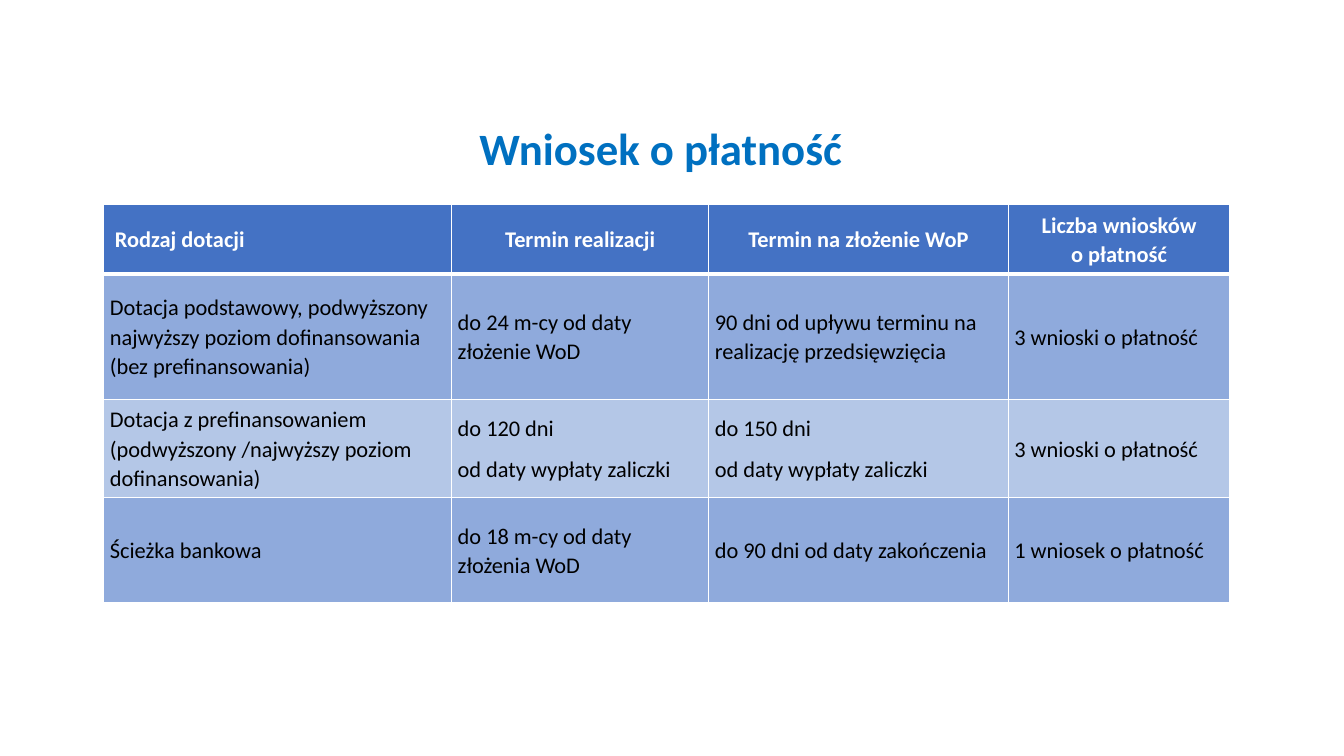
"""Build a slide with a table of grant types, deadlines and payment claims."""
from dataclasses import dataclass

from lxml.etree import SubElement
from pptx import Presentation
from pptx.dml.color import RGBColor
from pptx.enum.text import MSO_ANCHOR, PP_ALIGN
from pptx.oxml.ns import qn
from pptx.util import Inches, Pt

TITLE = "Wniosek o płatność"
HEAD = ("Rodzaj dotacji", "Termin realizacji", "Termin na złożenie WoP",
        "Liczba wniosków\vo płatność")
BODY = (
    ("Dotacja podstawowy, podwyższony najwyższy poziom dofinansowania\v(bez prefinansowania)",
     "do 24 m-cy od daty złożenie WoD",
     "90 dni od upływu terminu na realizację przedsięwzięcia",
     "3 wnioski o płatność"),
    ("Dotacja z prefinansowaniem (podwyższony /najwyższy poziom dofinansowania)",
     "do 120 dni\nod daty wypłaty zaliczki",
     "do 150 dni\nod daty wypłaty zaliczki",
     "3 wnioski o płatność"),
    ("Ścieżka bankowa",
     "do 18 m-cy od daty złożenia WoD",
     "do 90 dni od daty zakończenia",
     "1 wniosek o płatność"),
)
WIDE, HIGH = 13.33, 7.5
COLS = (3.45, 2.55, 2.97, 2.2)
ROWS = (0.69, 1.24, 0.98, 1.04)
LEFT, TOP = 1.03, 2.03
PAD, INDENT = 0.06, 0.11


@dataclass(frozen=True)
class Theme:
    """Hold the colours, font and type sizes."""
    font: str = "Calibri"
    title: str = "0070C0"
    head: str = "4472C4"
    bands: tuple = ("8FAADC", "B4C7E7")
    light: str = "FFFFFF"
    dark: str = "000000"
    large: int = 32
    small: int = 16
    thin: int = 1
    thick: int = 3


THEME = Theme()


def style(frame, size, color, bold, align, space, after=0):
    """Format every paragraph and run in a text frame."""
    for para in frame.paragraphs:
        para.alignment = align
        para.line_spacing = space
        para.space_before = Pt(0)
        para.space_after = Pt(after)
        for run in para.runs:
            run.font.name = THEME.font
            run.font.size = Pt(size)
            run.font.bold = bold
            run.font.color.rgb = RGBColor.from_string(color)


def border(cell, sides):
    """Draw the cell borders, given widths in points by side."""
    props = cell._tc.get_or_add_tcPr()
    for place, (side, width) in enumerate(sides.items()):
        line = SubElement(props, qn(f"a:ln{side}"), w=str(Pt(width)))
        fill = SubElement(line, qn("a:solidFill"))
        SubElement(fill, qn("a:srgbClr"), val=THEME.light)
        props.insert(place, line)


def fill_cell(cell, text, row, col):
    """Write and format one table cell."""
    top = row == 0
    cell.text_frame.text = text
    cell.vertical_anchor = MSO_ANCHOR.MIDDLE
    cell.margin_left = Inches(INDENT if top and col == 0 else PAD)
    cell.margin_right = Inches(PAD)
    cell.margin_top = cell.margin_bottom = 0
    align = PP_ALIGN.CENTER if top and col else PP_ALIGN.LEFT
    style(cell.text_frame, THEME.small, THEME.light if top else THEME.dark,
          top, align, 1.07, 8)
    color = THEME.head if top else THEME.bands[(row - 1) % 2]
    cell.fill.solid()
    cell.fill.fore_color.rgb = RGBColor.from_string(color)
    sides = dict.fromkeys("LRTB", THEME.thin)
    if top:
        sides["B"] = THEME.thick
    elif row == 1:
        sides["T"] = THEME.thick
    border(cell, sides)


def add_title(slide):
    """Place and format the title."""
    title = slide.shapes.title
    title.left, title.top = Inches(0.92), Inches(1.13)
    title.width, title.height = Inches(11.27), Inches(0.74)
    title.text_frame.text = TITLE
    title.text_frame.vertical_anchor = MSO_ANCHOR.MIDDLE
    style(title.text_frame, THEME.large, THEME.title, True, PP_ALIGN.CENTER, 0.9)


def add_grid(slide):
    """Add the table and fill its cells."""
    table = slide.shapes.add_table(
        len(ROWS), len(COLS), Inches(LEFT), Inches(TOP),
        Inches(sum(COLS)), Inches(sum(ROWS))).table
    for col, width in zip(table.columns, COLS):
        col.width = Inches(width)
    for row, height in zip(table.rows, ROWS):
        row.height = Inches(height)
    for row, texts in enumerate((HEAD, *BODY)):
        for col, text in enumerate(texts):
            fill_cell(table.cell(row, col), text, row, col)


def main():
    """Build and save the deck."""
    deck = Presentation()
    deck.slide_width, deck.slide_height = Inches(WIDE), Inches(HIGH)
    slide = deck.slides.add_slide(deck.slide_layouts[5])
    add_title(slide)
    add_grid(slide)
    deck.save("out.pptx")


if __name__ == "__main__":
    main()
